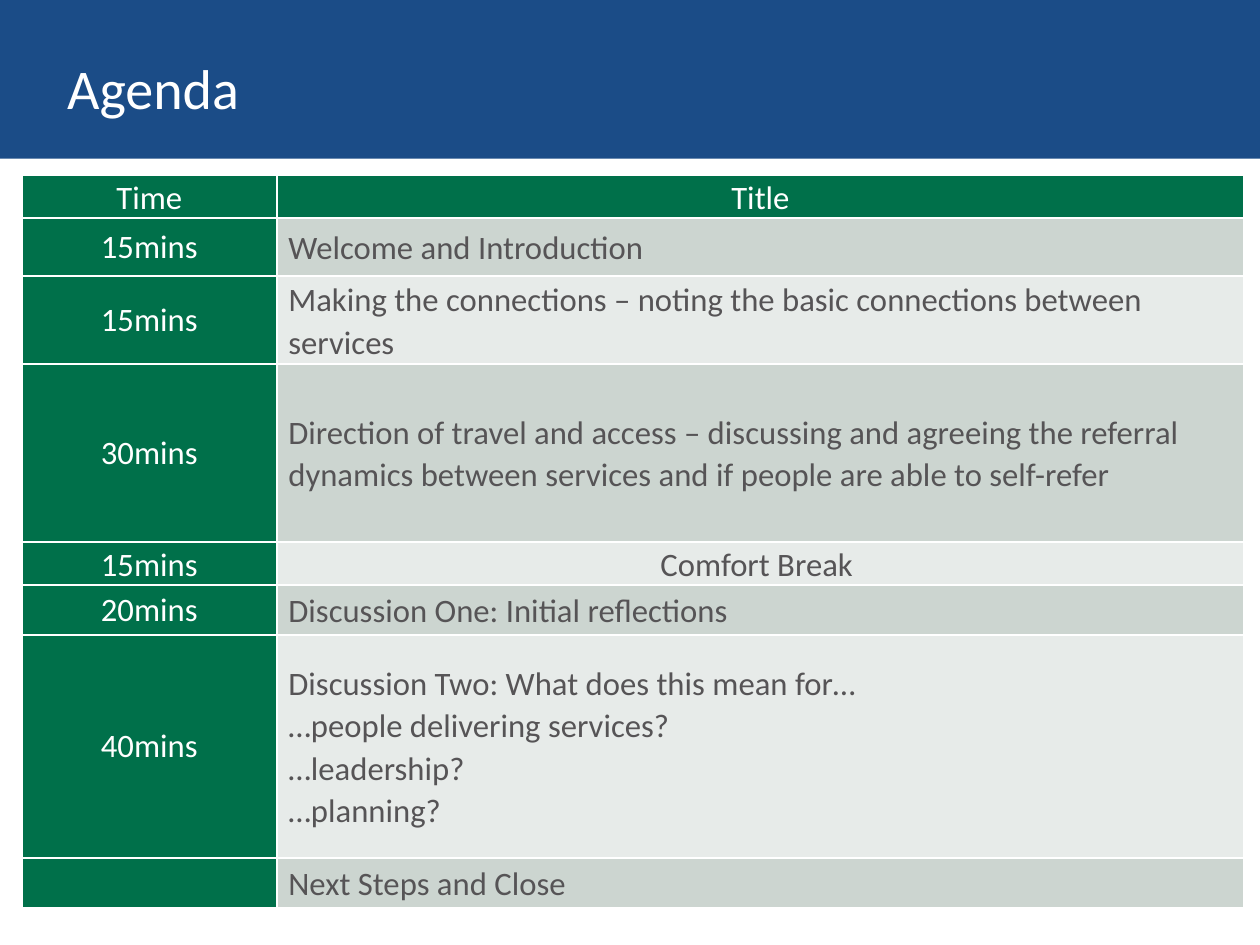
"""Build the agenda slide: a blue title band above a timetable."""
from lxml.etree import SubElement
from pptx import Presentation
from pptx.dml.color import RGBColor
from pptx.enum.shapes import MSO_SHAPE as Shape
from pptx.enum.text import MSO_ANCHOR as Anchor, PP_ALIGN as Align
from pptx.oxml.ns import qn
from pptx.util import Pt

WHITE, GREEN, GREY = "FFFFFF", "00704A", "565456"
BANDS = ["E7EBE9", "CCD5D0"]


def color(code):
    return RGBColor.from_string(code)


def style(para, size, code):
    para.font.name = "Calibri"
    para.font.size = Pt(size)
    para.font.color.rgb = color(code)


deck = Presentation()
deck.slide_width, deck.slide_height = Pt(540), Pt(405)
slide = deck.slides.add_slide(deck.slide_layouts[6])

band = slide.shapes.add_shape(Shape.RECTANGLE, 0, 0, Pt(540), Pt(68))
band.shadow.inherit = False
band.fill.solid()
band.fill.fore_color.rgb = color("1B4C87")
band.line.fill.background()

title = slide.shapes.add_textbox(Pt(28.8), Pt(24), Pt(501), Pt(27)).text_frame
title.word_wrap = True
title.vertical_anchor = Anchor.MIDDLE
title.margin_left = title.margin_right = title.margin_top = title.margin_bottom = 0
title.text = "Agenda"
style(title.paragraphs[0], 24, WHITE)

rows = [
    (18.5, "Time", "Title"),
    (25, "15mins", "Welcome and Introduction"),
    (37.6, "15mins", "Making the connections – noting the basic connections between services"),
    (76.3, "30mins", "Direction of travel and access – discussing and agreeing the referral "
     "dynamics between services and if people are able to self-refer"),
    (18.5, "15mins", "Comfort Break "),
    (21.4, "20mins", "Discussion One: Initial reflections"),
    (95.6, "40mins", "Discussion Two: What does this mean for…\n…people delivering services?\n"
     "…leadership?\n…planning?"),
    (21.4, "", "Next Steps and Close"),
]
total = sum(row[0] for row in rows)
table = slide.shapes.add_table(len(rows), 2, Pt(9.4), Pt(75), Pt(523.8), Pt(total)).table
table.columns[0].width, table.columns[1].width = Pt(109.2), Pt(414.6)

for r, (height, *texts) in enumerate(rows):
    table.rows[r].height = Pt(height)
    for c, text in enumerate(texts):
        cell = table.cell(r, c)
        head = r == 0 or c == 0
        cell.margin_left = cell.margin_right = Pt(5)
        cell.margin_top = cell.margin_bottom = 0
        cell.vertical_anchor = Anchor.MIDDLE
        cell.text = text
        for para in cell.text_frame.paragraphs:
            style(para, 14, WHITE if head else GREY)
            para.font.bold = False
            center = head or text.startswith("Comfort")
            para.alignment = Align.CENTER if center else Align.LEFT
            if c == 1 or r in (0, 4):
                para.line_spacing = 1.07
        props = cell._tc.get_or_add_tcPr()
        for side in ("lnL", "lnR", "lnT", "lnB"):
            edge = SubElement(props, qn("a:" + side), w=str(Pt(1)))
            paint = SubElement(edge, qn("a:solidFill"))
            SubElement(paint, qn("a:srgbClr"), val=WHITE)
        cell.fill.solid()
        cell.fill.fore_color.rgb = color(GREEN if head else BANDS[r % 2])

deck.save("out.pptx")
